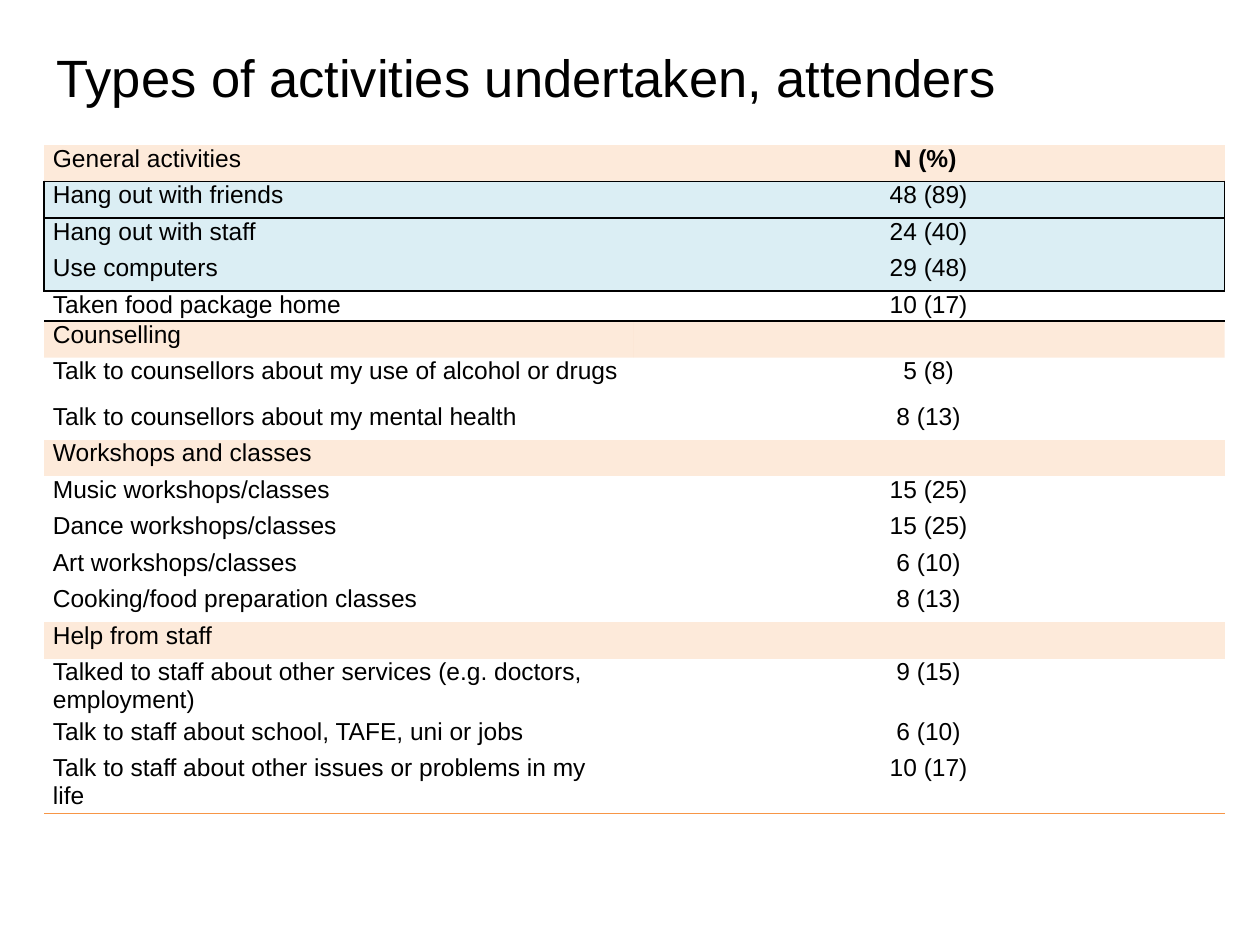
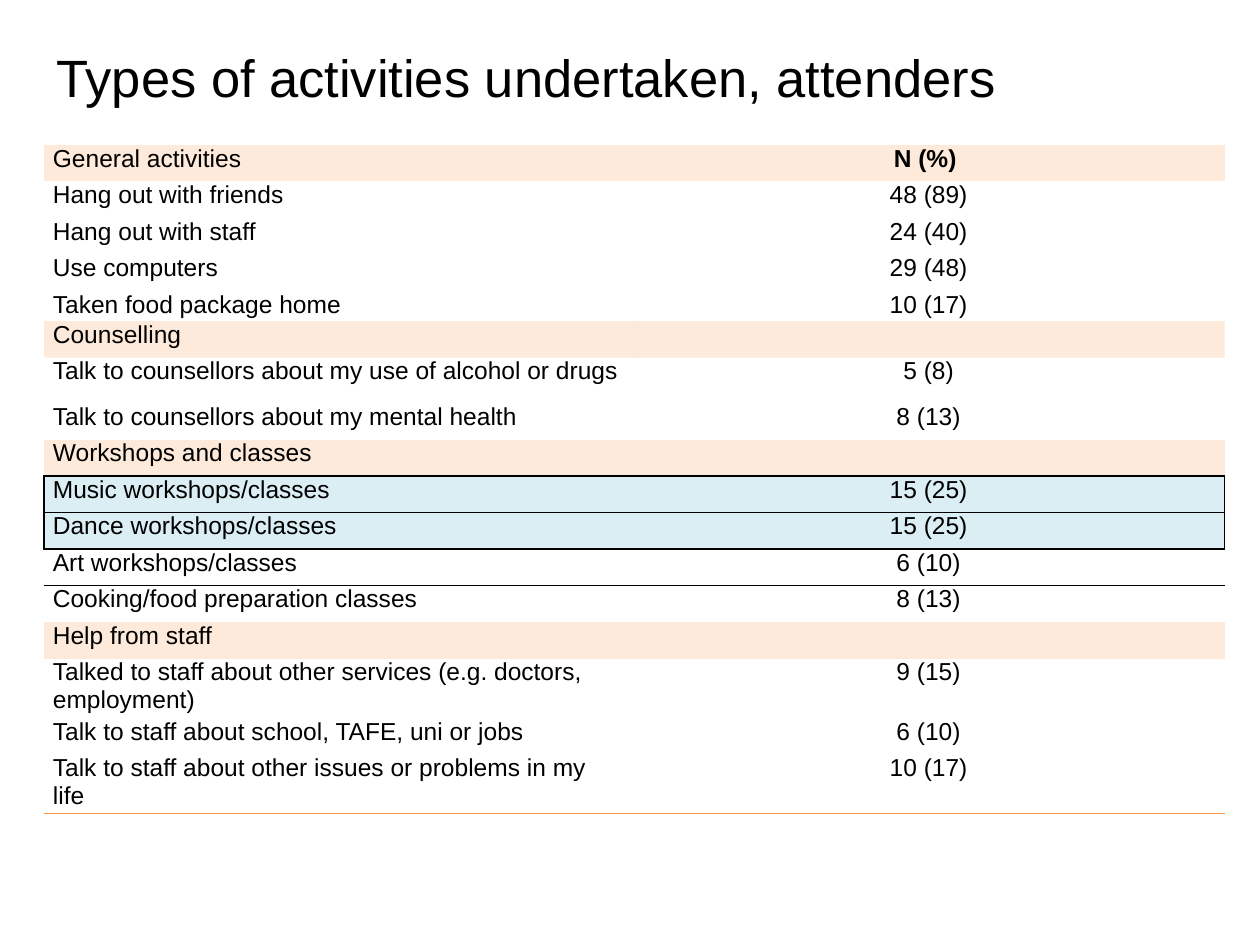
from lxml.etree import SubElement
from pptx import Presentation
from pptx.dml.color import RGBColor
from pptx.enum.text import MSO_ANCHOR, PP_ALIGN
from pptx.oxml.ns import qn
from pptx.util import Inches, Pt

# Shared style
FONT = "Arial"
BLACK, ORANGE = "000000", "F79646"
SECTION_FILL, HIGHLIGHT_FILL = "FDEADA", "DBEEF4"
NO_STYLE = "{2D5ABB26-0587-4C30-8999-92F81FD0307C}"
TITLE = "Types of activities undertaken, attenders"
LEFT = 0.35
COLUMN_WIDTHS = (4.68, 4.69)
ROW_HEIGHT = 0.29
SPECIAL_HEIGHTS = {4: 0.24, 6: 0.36, 14: 0.47, 16: 0.47}

ACTIVITIES = [
    ("General activities", "N (%) "),
    ("Hang out with friends", "48 (89)"),
    ("Hang out with staff", "24 (40)"),
    ("Use computers", "29 (48)"),
    ("Taken food package home", "10 (17)"),
    ("Counselling", ""),
    ("Talk to counsellors about my use of alcohol or drugs", "5 (8)"),
    ("Talk to counsellors about my mental health", "8 (13)"),
    ("Workshops and classes", ""),
    ("Music workshops/classes", "15 (25)"),
    ("Dance workshops/classes", "15 (25)"),
    ("Art workshops/classes", "6 (10)"),
    ("Cooking/food preparation classes", "8 (13)"),
    ("Help from staff", ""),
    ("Talked to staff about other services (e.g. doctors, employment)", "9 (15)"),
    ("Talk to staff about school, TAFE, uni or jobs", "6 (10)"),
    ("Talk to staff about other issues or problems in my life", "10 (17)"),
]
SECTION_ROWS = (0, 5, 8, 13)
TINTED_ROW = 5  # section row filled with transparent orange

# Per slide: highlighted rows, rows with a black line below
SLIDES = [
    ((1, 2, 3), (0, 1, 3, 4)),
    ((9, 10), (8, 9, 10, 11)),
]


def color(hex_string):
    return RGBColor.from_string(hex_string)


def set_font(paragraph, size, bold=False):
    font = paragraph.font
    font.name, font.size, font.bold = FONT, Pt(size), bold
    font.color.rgb = color(BLACK)


def add_title(slide, text):
    box = slide.shapes.add_textbox(Inches(LEFT), Inches(0.29), Inches(9), Inches(0.63))
    frame = box.text_frame
    frame.word_wrap = True
    frame.vertical_anchor = MSO_ANCHOR.MIDDLE
    frame.text = text
    set_font(frame.paragraphs[0], 30)


def add_border(cell, side, hex_string):
    line = SubElement(cell._tc.get_or_add_tcPr(), qn(f"a:ln{side}"), w=str(Pt(1)))
    fill = SubElement(line, qn("a:solidFill"))
    SubElement(fill, qn("a:srgbClr"), val=hex_string)


def fill_cell(cell, hex_string, opacity=100):
    cell.fill.solid()
    cell.fill.fore_color.rgb = color(hex_string)
    if opacity < 100:
        tint = cell._tc.tcPr.find(qn("a:solidFill"))[0]
        SubElement(tint, qn("a:alpha"), val=str(opacity * 1000))


def write_cell(cell, text, centred, bold):
    cell.margin_left, cell.margin_right = Inches(0.07), Inches(0.08)
    cell.margin_top = cell.margin_bottom = 0
    cell.text = text
    paragraph = cell.text_frame.paragraphs[0]
    if centred:
        paragraph.alignment = PP_ALIGN.CENTER
    set_font(paragraph, 14, bold)


def style_cell(cell, row, column, highlighted, underlined):
    # Borders come before the fill in the cell properties
    if row in highlighted:
        add_border(cell, "R" if column else "L", BLACK)
    if row in underlined:
        add_border(cell, "B", BLACK)
    elif row == len(ACTIVITIES) - 1:
        add_border(cell, "B", ORANGE)

    if row in highlighted:
        fill_cell(cell, HIGHLIGHT_FILL)
    elif row == TINTED_ROW:
        fill_cell(cell, ORANGE, 20)
    elif row in SECTION_ROWS:
        fill_cell(cell, SECTION_FILL)
    else:
        cell.fill.background()


def add_activity_table(slide, highlighted, underlined):
    heights = [SPECIAL_HEIGHTS.get(i, ROW_HEIGHT) for i in range(len(ACTIVITIES))]
    table = slide.shapes.add_table(
        len(ACTIVITIES), len(COLUMN_WIDTHS), Inches(LEFT), Inches(1.15),
        Inches(sum(COLUMN_WIDTHS)), Inches(sum(heights))).table
    table.first_row = table.horz_banding = False
    table._tbl.tblPr.find(qn("a:tableStyleId")).text = NO_STYLE
    for column, width in zip(table.columns, COLUMN_WIDTHS):
        column.width = Inches(width)
    for row, (activity, height) in enumerate(zip(ACTIVITIES, heights)):
        table.rows[row].height = Inches(height)
        for column, text in enumerate(activity):
            cell = table.cell(row, column)
            write_cell(cell, text, centred=column == 1, bold=(row, column) == (0, 1))
            style_cell(cell, row, column, highlighted, underlined)


def main():
    deck = Presentation()
    deck.slide_width, deck.slide_height = Inches(10), Inches(7.5)
    for highlighted, underlined in SLIDES:
        slide = deck.slides.add_slide(deck.slide_layouts[6])
        add_title(slide, TITLE)
        add_activity_table(slide, highlighted, underlined)
    deck.save("out.pptx")


if __name__ == "__main__":
    main()
